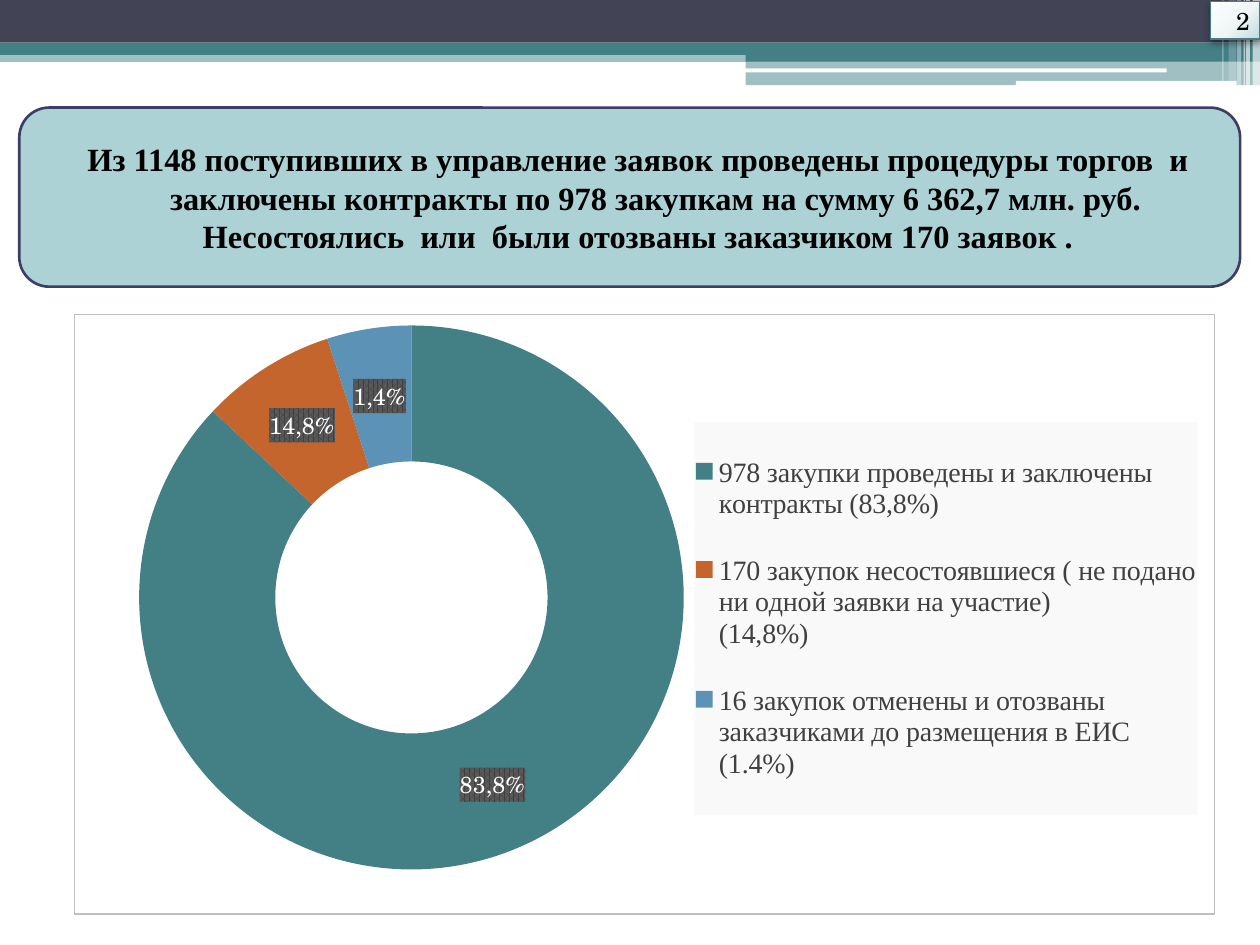
from pptx import Presentation
from pptx.chart.data import CategoryChartData
from pptx.dml.color import RGBColor
from pptx.enum.chart import XL_CHART_TYPE as ChartType, XL_LEGEND_POSITION as LegendPosition
from pptx.enum.shapes import MSO_AUTO_SHAPE_TYPE as ShapeType
from pptx.enum.text import MSO_ANCHOR as Anchor, MSO_AUTO_SIZE as AutoSize, PP_ALIGN as Align
from pptx.oxml import parse_xml
from pptx.oxml.ns import nsdecls, qn
from pptx.util import Cm, Pt

THEME = {
    "teal": "438086", "navy": "424456", "white": "FFFFFF", "black": "000000",
    "panel": "ADD2D6", "panel_line": "3D3E66", "frame": "BFBFBF",
    "legend_fill": "F9F9F9", "legend_text": "404040",
    "label_dark": "404040", "label_light": "595959",
    "serif": "Times New Roman", "display": "TeX Gyre Schola",
    "headline_size": 18.5, "legend_size": 16, "label_size": 13.3,
    "number_size": 14, "chart_size": 10,
}

HEADLINE = [
    "Из 1148 поступивших в управление заявок проведены процедуры торгов  и "
    "заключены контракты по 978 закупкам на сумму 6 362,7 млн. руб.",
    "Несостоялись  или  были отозваны заказчиком 170 заявок .",
]
SLIDE_NUMBER = "2"
PURCHASES = [
    ("978 закупки проведены и заключены контракты (83,8%)", 87, "83,8%", "438086"),
    ("170 закупок несостоявшиеся ( не подано ни одной заявки на участие)\n(14,8%)",
     8, "14,8%", "C4652D"),
    ("16 закупок отменены и отозваны заказчиками до размещения в ЕИС (1.4%)",
     5, "1,4%", "5C92B5"),
]

BANDS = [
    (0, 1.02, 25.4, 0.23, "teal", 50),
    (0, 0, 25.4, 0.86, "navy", 100),
    (0, 0.86, 25.4, 0.25, "teal", 100),
    (15.03, 0.99, 10.37, 0.25, "teal", 100),
    (15.03, 1.22, 10.37, 0.5, "teal", 50),
]
PILLS = [
    (15.01, 1.38, 8.51, 0.08, "white", 100),
    (20.48, 1.63, 4.45, 0.1, "white", 100),
]
STRIPES = [
    (left, 0, width, height, "white", alpha)
    for left, width, height, alpha in [
        (25.25, 0.15, 1.73, 65), (25.12, 0.08, 1.73, 65), (25.07, 0.03, 1.73, 60),
        (24.94, 0.08, 1.73, 40), (24.77, 0.15, 1.63, 20), (24.64, 0.03, 1.63, 30),
    ]
]

PANEL_BOX = (0.39, 2.17, 24.61, 3.61)
CHART_BOX = (1.49, 6.32, 23.01, 12.12)
PLOT_BOX = (0.46, 0.23, 12.68, 10.99)
LEGEND_BOX = (12.51, 2.18, 10.15, 7.94)
NUMBER_BOX = (24.41, 0.03, 0.99, 0.76)


def color(name):
    return RGBColor.from_string(THEME.get(name, name))


def lengths(box):
    return [Cm(value) for value in box]


def set_all(target, values):
    for name, value in values.items():
        setattr(target, name, value)


def style_font(font, size, face, ink, bold=False):
    set_all(font, {"size": Pt(THEME[size]), "name": THEME[face], "bold": bold})
    font.color.rgb = color(ink)


def style_line(line, ink, width):
    line.color.rgb = color(ink)
    line.width = Pt(width)


def indent(paragraph, left, first):
    properties = paragraph._p.get_or_add_pPr()
    properties.set("marL", str(Cm(left)))
    properties.set("indent", str(Cm(first)))
    return properties


def add_block(slide, kind, box):
    shape = slide.shapes.add_shape(kind, *lengths(box))
    shape.shadow.inherit = False
    return shape


def add_decoration(slide, kind, blocks):
    for *box, ink, alpha in blocks:
        shape = add_block(slide, kind, box)
        shape.fill.solid()
        shape.fill.fore_color.rgb = color(ink)
        shape.line.fill.background()
        if alpha < 100:
            fill_color = shape._element.spPr.find(qn("a:solidFill"))[0]
            fill_color.append(parse_xml(f'<a:alpha {nsdecls("a")} val="{alpha * 1000}"/>'))


def add_headline(slide):
    panel = slide.placeholders[1]
    set_all(panel, dict(zip(("left", "top", "width", "height"), lengths(PANEL_BOX))))
    panel._element.spPr.append(parse_xml(
        f'<a:prstGeom {nsdecls("a")} prst="roundRect"><a:avLst/></a:prstGeom>'))
    panel.fill.solid()
    panel.fill.fore_color.rgb = color("panel")
    style_line(panel.line, "panel_line", 1.5)
    frame = panel.text_frame
    set_all(frame, {"word_wrap": True, "auto_size": AutoSize.NONE,
                    "vertical_anchor": Anchor.MIDDLE})
    for index, text in enumerate(HEADLINE):
        paragraph = frame.add_paragraph() if index else frame.paragraphs[0]
        set_all(paragraph, {"alignment": Align.CENTER, "space_before": Pt(0)})
        indent(paragraph, 1.02, -0.71).append(parse_xml(f'<a:buNone {nsdecls("a")}/>'))
        run = paragraph.add_run()
        run.text = text
        style_font(run.font, "headline_size", "serif", "black", True)


def manual_layout(box, inner=False):
    target = '<c:layoutTarget val="inner"/>' if inner else ""
    modes = "".join(f'<c:{key}Mode val="edge"/>' for key in "xy")
    sizes = "".join(f'<c:{key} val="{value / whole:.4f}"/>'
                    for key, value, whole in zip("xywh", box, CHART_BOX[2:] * 2))
    return parse_xml(f'<c:layout {nsdecls("c")}><c:manualLayout>{target}{modes}{sizes}'
                     '</c:manualLayout></c:layout>')


def shape_properties(content):
    return parse_xml(f'<c:spPr {nsdecls("c", "a")}>{content}</c:spPr>')


def solid(ink):
    return f'<a:solidFill><a:srgbClr val="{THEME[ink]}"/></a:solidFill>'


def drop_layout(element):
    for layout in element.findall(qn("c:layout")):
        element.remove(layout)


def style_points(series):
    labels = series.data_labels
    set_all(labels, {"show_percentage": True, "show_value": False})
    style_font(labels.font, "label_size", "display", "white", True)
    pattern = (f'<a:pattFill prst="pct75"><a:fgClr><a:srgbClr val="{THEME["label_dark"]}"/>'
               f'</a:fgClr><a:bgClr><a:srgbClr val="{THEME["label_light"]}"/></a:bgClr></a:pattFill>')
    for index, (_, _, text, ink) in enumerate(PURCHASES):
        point = series.points[index]
        point.format.fill.solid()
        point.format.fill.fore_color.rgb = color(ink)
        point.format.line.fill.background()
        run = point.data_label.text_frame.paragraphs[0].add_run()
        run.text = text
        style_font(run.font, "label_size", "display", "white")
    for label in series._element.iter(qn("c:dLbl")):
        label.find(qn("c:tx")).addnext(shape_properties(pattern))
        label.find(qn("c:showVal")).set("val", "0")
        label.find(qn("c:showPercent")).set("val", "1")


def add_purchase_chart(slide):
    data = CategoryChartData()
    data.categories = [purchase[0] for purchase in PURCHASES]
    data.add_series("Series 1", [purchase[1] for purchase in PURCHASES])
    chart = slide.shapes.add_chart(ChartType.DOUGHNUT, *lengths(CHART_BOX), data).chart
    set_all(chart, {"has_title": False, "has_legend": True})
    style_font(chart.font, "chart_size", "display", "black")
    chart.plots[0].vary_by_categories = True
    style_points(chart.plots[0].series[0])

    set_all(chart.legend, {"position": LegendPosition.RIGHT, "include_in_layout": False})
    style_font(chart.legend.font, "legend_size", "serif", "legend_text")
    root = chart._chartSpace
    legend = next(root.iter(qn("c:legend")))
    drop_layout(legend)
    legend.find(qn("c:legendPos")).addnext(manual_layout(LEGEND_BOX))
    legend.find(qn("c:txPr")).addprevious(shape_properties(solid("legend_fill")))
    plot_area = next(root.iter(qn("c:plotArea")))
    drop_layout(plot_area)
    plot_area.insert(0, manual_layout(PLOT_BOX, True))
    border = f'<a:ln w="{Pt(0.75)}">{solid("frame")}</a:ln>'
    root.find(qn("c:chart")).addnext(shape_properties(solid("white") + border))


def add_slide_number(slide):
    badge = add_block(slide, ShapeType.RECTANGLE, NUMBER_BOX)
    style_line(badge.line, "teal", 0.75)
    stops = "".join(f'<a:gs pos="{position * 1000}"><a:srgbClr val="{ink}"/></a:gs>'
                    for position, ink in [(0, "FEFEFE"), (55, "F0F6F6"), (100, "BFD9DD")])
    properties = badge._element.spPr
    properties.find(qn("a:prstGeom")).addnext(parse_xml(
        f'<a:gradFill {nsdecls("a")}><a:gsLst>{stops}</a:gsLst><a:path path="circle">'
        '<a:fillToRect l="-40000" t="-90000" r="140000" b="190000"/></a:path></a:gradFill>'))
    properties.find(qn("a:effectLst")).append(parse_xml(
        f'<a:outerShdw {nsdecls("a")} blurRad="{Pt(4.1)}" dist="{Pt(2)}" dir="5400000">'
        f'<a:srgbClr val="{THEME["black"]}"><a:alpha val="40000"/></a:srgbClr></a:outerShdw>'))
    badge.text_frame.vertical_anchor = Anchor.MIDDLE
    paragraph = badge.text_frame.paragraphs[0]
    set_all(paragraph, {"alignment": Align.CENTER, "space_before": Pt(3)})
    indent(paragraph, 0.3, 0)
    run = paragraph.add_run()
    run.text = SLIDE_NUMBER
    style_font(run.font, "number_size", "display", "black")


def main():
    presentation = Presentation()
    set_all(presentation, {"slide_width": Cm(25.4), "slide_height": Cm(19.05)})
    slide = presentation.slides.add_slide(presentation.slide_layouts[1])
    title = slide.shapes.title._element
    title.getparent().remove(title)
    add_decoration(slide, ShapeType.RECTANGLE, BANDS)
    add_decoration(slide, ShapeType.ROUNDED_RECTANGLE, PILLS)
    add_decoration(slide, ShapeType.RECTANGLE, STRIPES)
    add_headline(slide)
    add_purchase_chart(slide)
    add_slide_number(slide)
    presentation.save("out.pptx")


if __name__ == "__main__":
    main()
